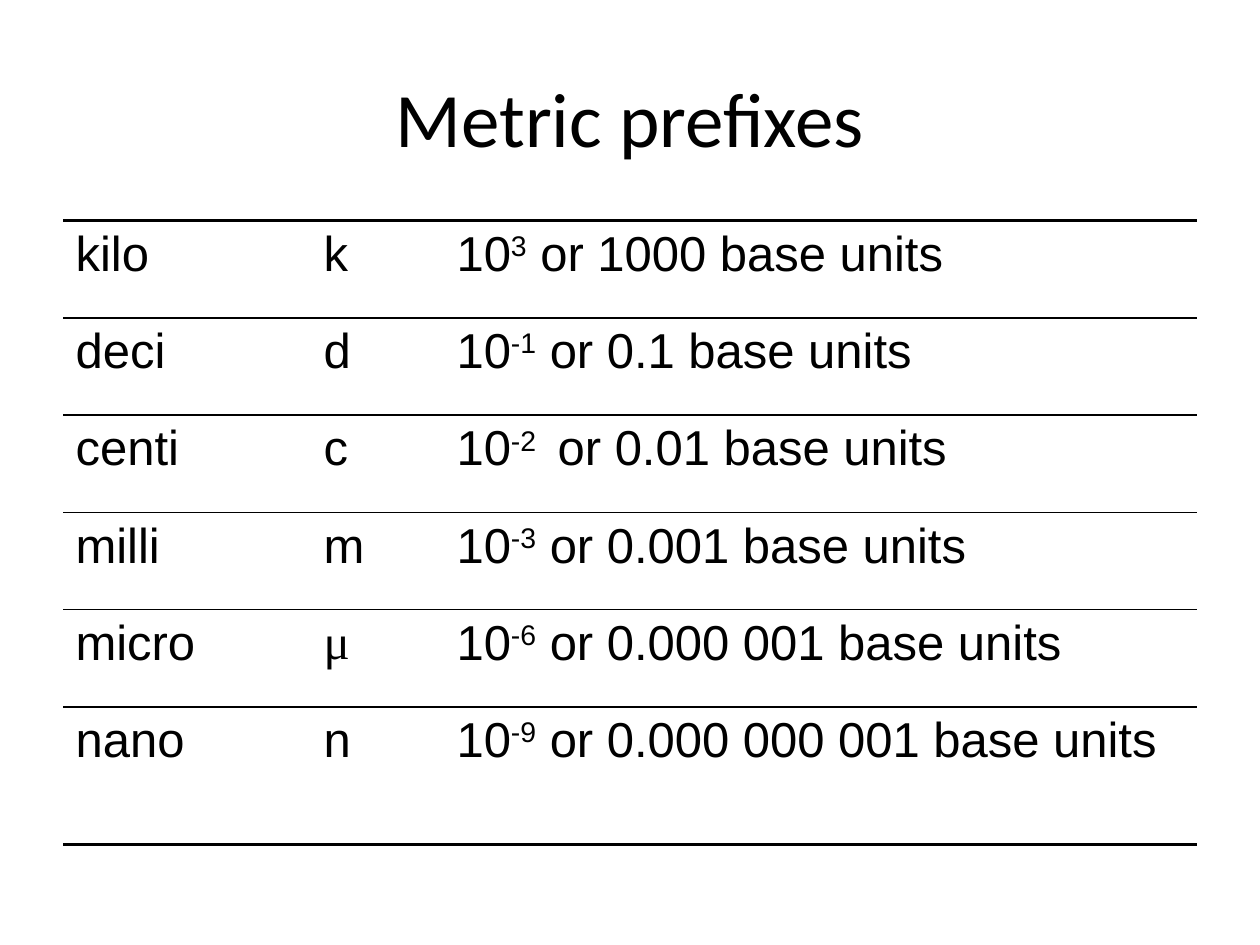
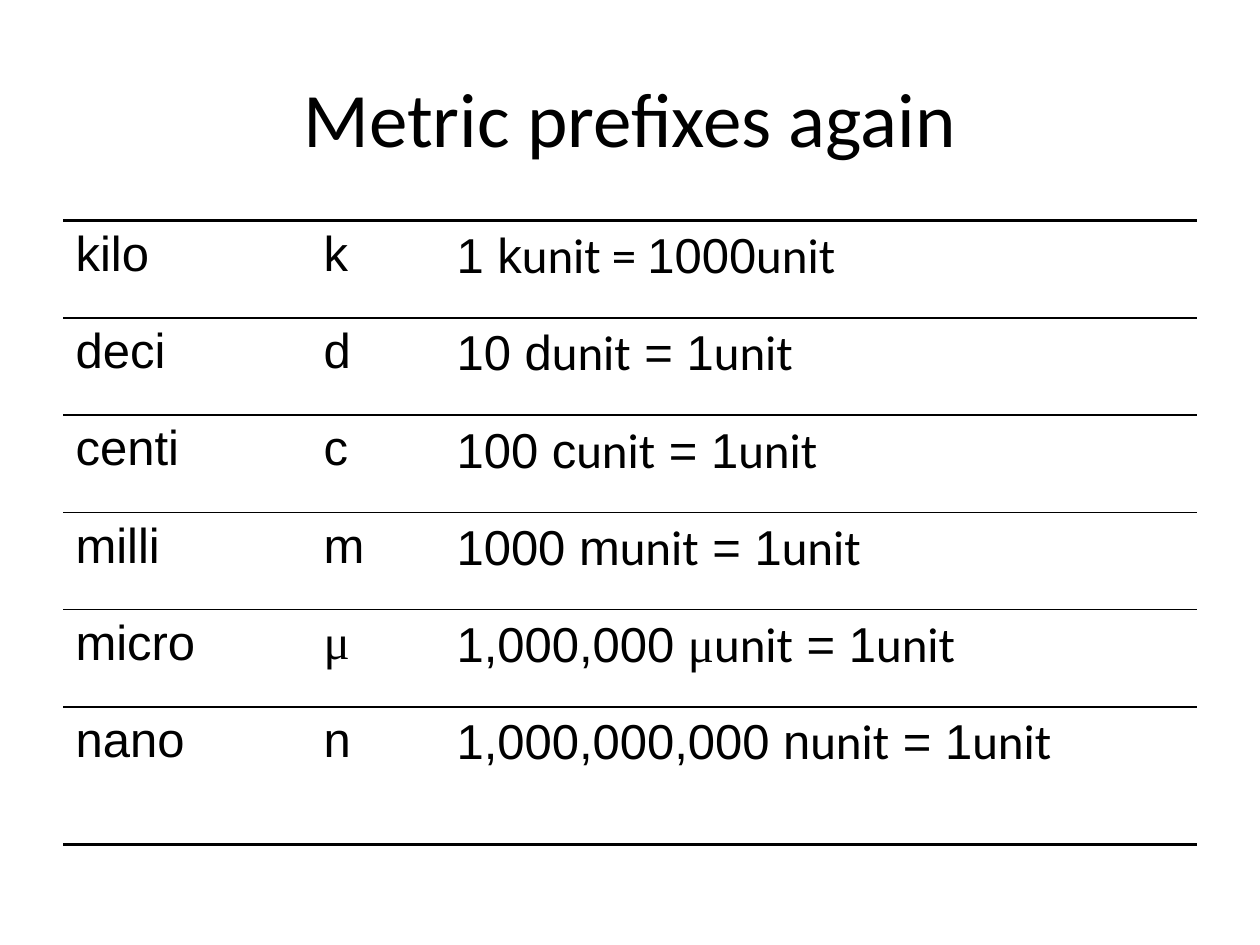
import pptx
import pptx.util
import pptx.dml.color
import pptx.enum.text
import pptx.oxml.ns
import lxml.etree

Cm = pptx.util.Cm
Pt = pptx.util.Pt
qn = pptx.oxml.ns.qn

# Shared style
BLACK = pptx.dml.color.RGBColor(0, 0, 0)
SANS, UNIT_FONT, GREEK_FONT = "Arial", "Calibri", "Times New Roman"
LEFT, WIDTH = Cm(1.27), Cm(22.86)
COLUMN_WIDTHS = [5, 2.68, 15.18]
ROW_HEIGHTS = [1.96] * 5 + [2.78]
THIN, THICK = 1, 2

# Content
PREFIXES = [("kilo", "k"), ("deci", "d"), ("centi", "c"),
            ("milli", "m"), ("micro", "μ"), ("nano", "n")]
POWERS = [("3", " or 1000 base units"), ("-1", " or 0.1 base units"),
          ("-2 ", " or 0.01 base units"), ("-3", " or 0.001 base units"),
          ("-6", " or 0.000 001 base units"),
          ("-9", " or 0.000 000 001 base units")]
COUNTS = ["10 d", "100 c", "1000 m", "1,000,000 μ", "1,000,000,000 n"]

# Meanings are lists of runs: (text, font, superscript)
as_powers = [[("10", SANS, False), (power, SANS, True), (rest, SANS, False)]
             for power, rest in POWERS]
as_equations = [[("1 k", SANS, False), ("unit = ", UNIT_FONT, False),
                 ("1000", SANS, False), ("unit", UNIT_FONT, False)]]
for count in COUNTS:
    number = count.rstrip("μ")
    equation = [(number, SANS, False)]
    if number != count:
        equation.append(("μ", GREEK_FONT, False))
    as_equations.append(equation + [("unit", UNIT_FONT, False),
                                    (" = 1", SANS, False),
                                    ("unit", UNIT_FONT, False)])


def add_run(paragraph, text, font, size, superscript=False):
    run = paragraph.add_run()
    run.text = text
    run.font.name = font
    run.font.size = Pt(size)
    run.font.color.rgb = BLACK
    if superscript:
        run.font._element.set("baseline", "30000")


def set_border(cell, side, width):
    """Draw one cell edge; a width of 0 leaves it invisible."""
    properties = cell._tc.get_or_add_tcPr()
    line = lxml.etree.SubElement(properties, qn("a:ln" + side), w=str(Pt(width)))
    if width:
        fill = lxml.etree.SubElement(line, qn("a:solidFill"))
        lxml.etree.SubElement(fill, qn("a:srgbClr"), val=str(BLACK))
    else:
        lxml.etree.SubElement(line, qn("a:noFill"))


deck = pptx.Presentation()
deck.slide_width, deck.slide_height = Cm(25.4), Cm(19.05)

for heading, meanings in [("Metric prefixes", as_powers),
                          ("Metric prefixes again", as_equations)]:
    slide = deck.slides.add_slide(deck.slide_layouts[6])

    # Prefix table
    frame = slide.shapes.add_table(len(PREFIXES), len(COLUMN_WIDTHS), LEFT,
                                   Cm(4.45), WIDTH, Cm(sum(ROW_HEIGHTS)))
    prefix_table = frame.table
    prefix_table.first_row = prefix_table.horz_banding = False
    for column, width in zip(prefix_table.columns, COLUMN_WIDTHS):
        column.width = Cm(width)
    for row, height in zip(prefix_table.rows, ROW_HEIGHTS):
        row.height = Cm(height)

    last = len(PREFIXES) - 1
    for index, ((name, symbol), meaning) in enumerate(zip(PREFIXES, meanings)):
        symbol_font = GREEK_FONT if symbol == "μ" else SANS
        contents = [[(name, SANS, False)], [(symbol, symbol_font, False)], meaning]
        for cell, runs in zip(prefix_table.rows[index].cells, contents):
            paragraph = cell.text_frame.paragraphs[0]
            indents = paragraph._p.get_or_add_pPr()
            indents.set("marL", str(Cm(0.95)))
            indents.set("indent", str(Cm(-0.95)))
            for text, font, superscript in runs:
                add_run(paragraph, text, font, 28, superscript)
            set_border(cell, "L", 0)
            set_border(cell, "R", 0)
            set_border(cell, "T", THICK if index == 0 else THIN)
            set_border(cell, "B", THICK if index == last else THIN)
            cell.fill.background()

    # Title
    title = slide.shapes.add_textbox(LEFT, Cm(0.76), WIDTH, Cm(3.18)).text_frame
    title.word_wrap = True
    title.vertical_anchor = pptx.enum.text.MSO_ANCHOR.MIDDLE
    title.paragraphs[0].alignment = pptx.enum.text.PP_ALIGN.CENTER
    add_run(title.paragraphs[0], heading, "Calibri", 44)

deck.save("out.pptx")
